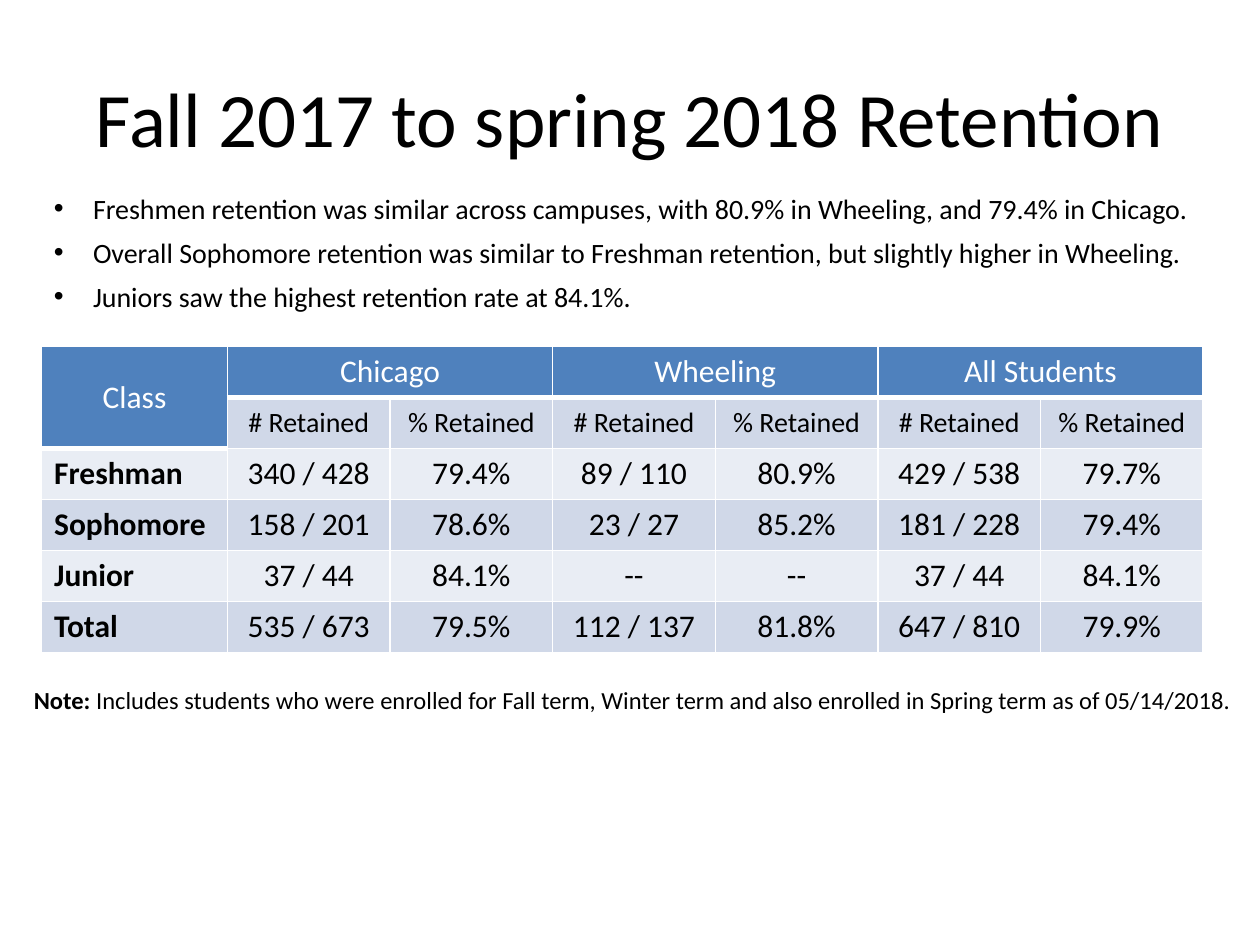
"""Build the Fall 2017 to spring 2018 retention slide."""
from dataclasses import dataclass

import pptx
import pptx.dml.color
import pptx.enum.text
import pptx.oxml
import pptx.oxml.ns
import pptx.util

COLORS = {"text": "000000", "white": "FFFFFF", "header": "4F81BD",
          "band": "D0D8E8", "light": "E9EDF4"}
FONT = "Calibri"
WIDTH, HEIGHT = pptx.util.Inches(10), pptx.util.Inches(7.5)
ALIGN = pptx.enum.text.PP_ALIGN
ANCHOR = pptx.enum.text.MSO_ANCHOR

TITLE = "Fall 2017 to spring 2018 Retention"
BULLETS = [
    "Freshmen retention was similar across campuses, with 80.9% in Wheeling, and 79.4% in Chicago.",
    "Overall Sophomore retention was similar to Freshman retention, but slightly higher in Wheeling.",
    "Juniors saw the highest retention rate at 84.1%.",
]
NOTE = ("Includes students who were enrolled for Fall term, Winter term "
        "and also enrolled in Spring term as of 05/14/2018.")
CAMPUSES = ["Chicago", "Wheeling", "All Students"]
MEASURES = ["# Retained", "% Retained"]
RETENTION = [
    ["Freshman", "340 / 428", "79.4%", "89 / 110", "80.9%", "429 / 538", "79.7%"],
    ["Sophomore", "158 / 201", "78.6%", "23 / 27", "85.2%", "181 / 228", "79.4%"],
    ["Junior", "37 / 44", "84.1%", "--", "--", "37 / 44", "84.1%"],
    ["Total", "535 / 673", "79.5%", "112 / 137", "81.8%", "647 / 810", "79.9%"],
]


@dataclass
class Box:
    """A frame in percent of the slide's width and height."""
    x: float
    y: float
    w: float
    h: float

    def emu(self) -> list[int]:
        shares = (self.x, self.y, self.w, self.h)
        return [round(v * side / 100) for v, side in zip(shares, (WIDTH, HEIGHT) * 2)]


@dataclass
class Style:
    """Look of a run of text."""
    size: float
    color: str = "text"
    bold: bool = False


@dataclass
class CellLook:
    """Look of a table cell."""
    style: Style
    fill: str
    align: ALIGN = ALIGN.CENTER
    anchor: ANCHOR = ANCHOR.MIDDLE
    bottom: float = 1


def format_run(r, style: Style) -> None:
    r.font.name = FONT
    r.font.size = pptx.util.Pt(style.size)
    r.font.bold = style.bold
    r.font.color.rgb = pptx.dml.color.RGBColor.from_string(COLORS[style.color])


def add_text(s, box: Box, text: str, style: Style):
    tf = s.shapes.add_textbox(*box.emu()).text_frame
    tf.word_wrap = True
    tf.text = text
    for p in tf.paragraphs:
        for r in p.runs:
            format_run(r, style)
    return tf


def add_bullets(tf) -> None:
    indent = pptx.util.Inches(0.31)
    for p in tf.paragraphs:
        pPr = p._p.get_or_add_pPr()
        pPr.set("marL", str(indent))
        pPr.set("indent", str(-indent))
        ns = pptx.oxml.ns.nsdecls("a")
        pPr.append(pptx.oxml.parse_xml(f'<a:buFont {ns} typeface="Arial"/>'))
        pPr.append(pptx.oxml.parse_xml(f'<a:buChar {ns} char="•"/>'))
    for p in tf.paragraphs[:-1]:
        p.space_after = pptx.util.Pt(6)


def add_borders(cell, bottom: float) -> None:
    tcPr = cell._tc.get_or_add_tcPr()
    for side, width in zip("LRTB", (1, 1, 1, bottom)):
        tcPr.append(pptx.oxml.parse_xml(
            f'<a:ln{side} {pptx.oxml.ns.nsdecls("a")} w="{pptx.util.Pt(width)}"><a:solidFill>'
            f'<a:srgbClr val="{COLORS["white"]}"/></a:solidFill></a:ln{side}>'))


def fill_cell(cell, text: str, look: CellLook) -> None:
    add_borders(cell, look.bottom)
    cell.fill.solid()
    cell.fill.fore_color.rgb = pptx.dml.color.RGBColor.from_string(COLORS[look.fill])
    cell.vertical_anchor = look.anchor
    cell.text_frame.text = text
    p = cell.text_frame.paragraphs[0]
    p.alignment = look.align
    for r in p.runs:
        format_run(r, look.style)


def cell_look(row: int, col: int) -> CellLook:
    if row == 0 or (row == 1 and col == 0):
        return CellLook(Style(18, "white"), "header", bottom=3)
    if row == 1:
        return CellLook(Style(16), "band")
    fill = "band" if row % 2 else "light"
    if col == 0:
        return CellLook(Style(18, bold=True), fill, ALIGN.LEFT, ANCHOR.TOP)
    return CellLook(Style(18), fill)


def add_retention_table(s, box: Box, class_share: float) -> None:
    campus_row = ["Class"] + [text for name in CAMPUSES for text in (name, "")]
    rows = [campus_row, [""] + MEASURES * len(CAMPUSES)] + RETENTION
    frame = box.emu()
    table = s.shapes.add_table(len(rows), len(campus_row), *frame).table
    class_width = round(frame[2] * class_share)
    for i, column in enumerate(table.columns):
        column.width = class_width if i == 0 else (frame[2] - class_width) // (len(campus_row) - 1)
    for i, row in enumerate(rows):
        for j, text in enumerate(row):
            fill_cell(table.cell(i, j), text, cell_look(i, j))
    table.cell(0, 0).merge(table.cell(1, 0))
    for j in range(1, len(campus_row), len(MEASURES)):
        table.cell(0, j).merge(table.cell(0, j + 1))


def main() -> None:
    prs = pptx.Presentation()
    prs.slide_width, prs.slide_height = WIDTH, HEIGHT
    s = prs.slides.add_slide(prs.slide_layouts[6])

    tf = add_text(s, Box(5, 4, 90, 16.67), TITLE, Style(44))
    tf.vertical_anchor = ANCHOR.MIDDLE
    tf.paragraphs[0].alignment = ALIGN.CENTER

    add_retention_table(s, Box(3.3, 36.67, 92.2, 32.4), 0.16)
    add_bullets(add_text(s, Box(3.3, 19.6, 92.5, 14.4), "\n".join(BULLETS), Style(16)))

    tf = add_text(s, Box(1.7, 71.87, 101.1, 4.53), "Note: ", Style(14, bold=True))
    r = tf.paragraphs[0].add_run()
    r.text = NOTE
    format_run(r, Style(14))

    prs.save("out.pptx")


if __name__ == "__main__":
    main()
